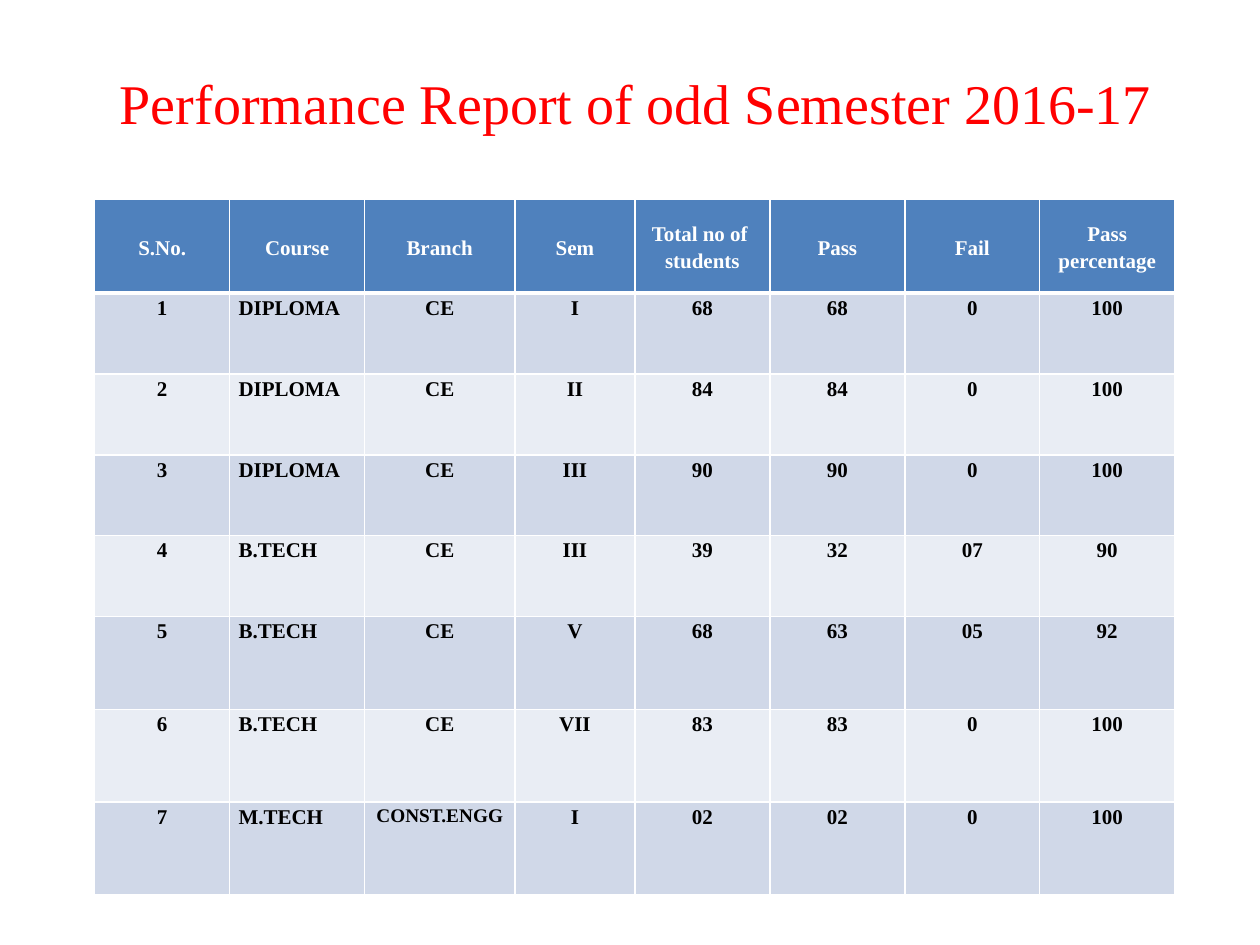
from lxml import etree
from pptx import Presentation
from pptx.dml.color import RGBColor
from pptx.enum.text import MSO_ANCHOR, PP_ALIGN
from pptx.oxml.ns import qn
from pptx.util import Cm, Pt

CENTER, JUSTIFY = PP_ALIGN.CENTER, PP_ALIGN.JUSTIFY
TOP, MIDDLE = MSO_ANCHOR.TOP, MSO_ANCHOR.MIDDLE
FONT = "Times New Roman"
WHITE, BLACK, RED = "FFFFFF", "000000", "FF0000"
BLUE, BANDS = "4F81BD", ("E9EDF4", "D0D8E8")
WIDTHS = [2.72, 2.72, 3.03, 2.42] + [2.72] * 4
HEIGHTS = [1.89] + [1.63] * 4 + [1.87] * 3
HEADS = ["S.No.", "Course", "Branch", "Sem", "Total no of  students",
         "Pass", "Fail", "Pass percentage"]
RESULTS = [
    ("DIPLOMA", "CE", "I", "68", "68", "0", "100"),
    ("DIPLOMA", "CE", "II", "84", "84", "0", "100"),
    ("DIPLOMA", "CE", "III", "90", "90", "0", "100"),
    ("B.TECH", "CE", "III", "39", "32", "07", "90"),
    ("B.TECH", "CE", "V", "68", "63", "05", "92"),
    ("B.TECH", "CE", "VII", "83", "83", "0", "100"),
    ("M.TECH", "CONST.ENGG", "I", "02", "02", "0", "100"),
]


def color(code):
    return RGBColor.from_string(code)


def write(frame, text, size=12, ink=BLACK, bold=True, align=CENTER,
          line=1.15, after=0):
    frame.word_wrap = True
    para = frame.paragraphs[0]
    para.alignment = align
    para.line_spacing = line
    para.space_after = Pt(after)
    run = para.add_run()
    run.text = text
    run.font.name = FONT
    run.font.size = Pt(size)
    run.font.bold = bold
    run.font.color.rgb = color(ink)


def border(cell, side, width):
    props = cell._tc.get_or_add_tcPr()
    edge = etree.SubElement(props, qn(f"a:ln{side}"), w=str(Pt(width)))
    fill = etree.SubElement(edge, qn("a:solidFill"))
    etree.SubElement(fill, qn("a:srgbClr"), val=WHITE)


def style(cell, fill, anchor, above=1, below=1):
    for side, width in zip("LRTB", (1, 1, above, below)):
        border(cell, side, width)
    cell.fill.solid()
    cell.fill.fore_color.rgb = color(fill)
    cell.vertical_anchor = anchor
    cell.margin_left = cell.margin_right = Cm(0.18)
    cell.margin_top = cell.margin_bottom = 0


def add_title(slide, text):
    box = slide.shapes.add_textbox(Cm(1.07), Cm(0.64), Cm(23.5), Cm(4.45))
    frame = box.text_frame
    frame.vertical_anchor = TOP
    frame.margin_top = Cm(0.74)
    write(frame, text, size=32, ink=RED, bold=False, line=1)


def add_report(slide):
    shape = slide.shapes.add_table(
        len(HEIGHTS), len(WIDTHS), Cm(1.91), Cm(4.02),
        Cm(sum(WIDTHS)), Cm(sum(HEIGHTS)))
    table = shape.table
    for col, width in zip(table.columns, WIDTHS):
        col.width = Cm(width)
    for row, height in zip(table.rows, HEIGHTS):
        row.height = Cm(height)
    for cell, text in zip(table.rows[0].cells, HEADS):
        style(cell, BLUE, MIDDLE, below=3)
        write(cell.text_frame, text, ink=WHITE)
    for num, result in enumerate(RESULTS, 1):
        for col, text in enumerate((str(num), *result)):
            cell = table.cell(num, col)
            style(cell, BANDS[num % 2], TOP, above=3 if num == 1 else 1)
            write(cell.text_frame, text, after=10,
                  size=11 if text == "CONST.ENGG" else 12,
                  align=JUSTIFY if col == 1 else CENTER)


def main():
    deck = Presentation()
    deck.slide_width, deck.slide_height = Cm(25.4), Cm(19.05)
    slide = deck.slides.add_slide(deck.slide_layouts[6])
    add_title(slide, "Performance Report of odd Semester 2016-17")
    add_report(slide)
    deck.save("out.pptx")


if __name__ == "__main__":
    main()
